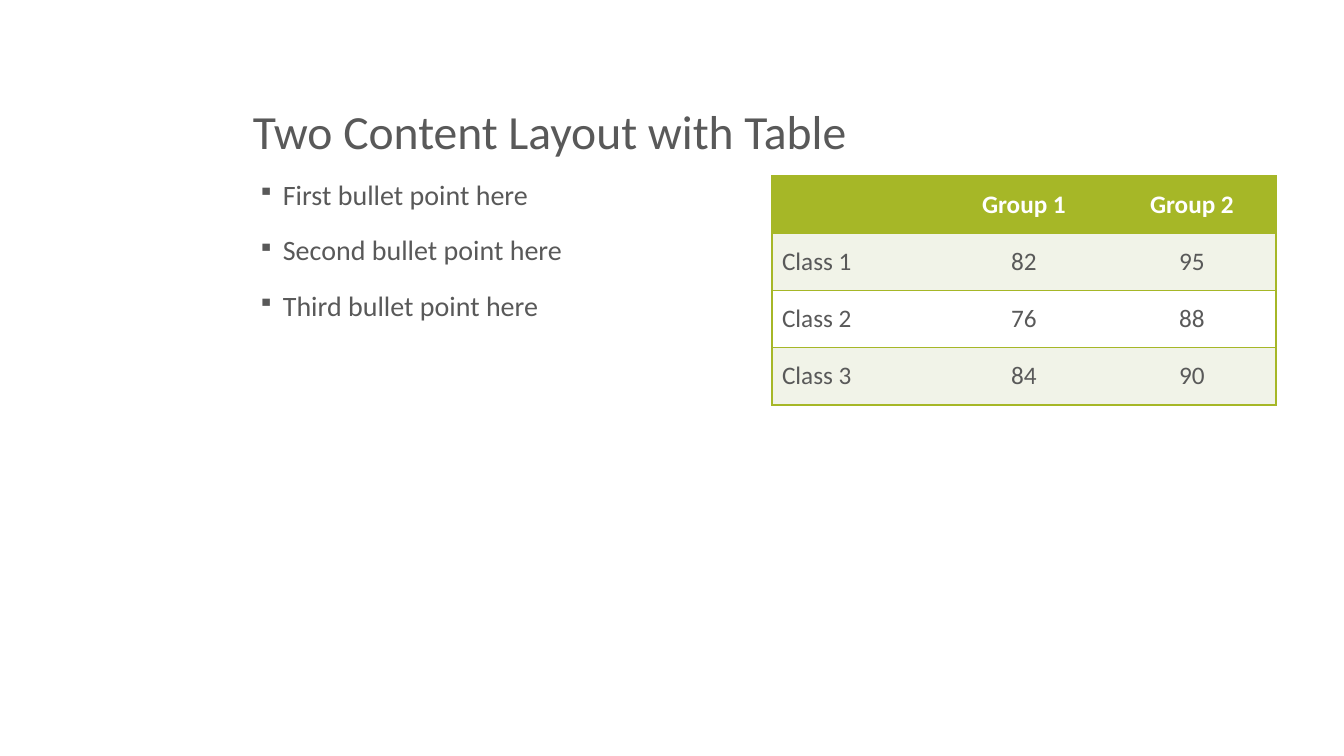
from dataclasses import dataclass

from lxml.etree import SubElement
from pptx import Presentation
from pptx.dml.color import RGBColor
from pptx.enum.text import MSO_ANCHOR, PP_ALIGN
from pptx.oxml.ns import qn
from pptx.util import Pt

SCALE = 914400 / 100.8


@dataclass(frozen=True)
class Theme:
    face: str = "Calibri"
    ink: str = "595959"
    green: str = "A6B727"
    pale: str = "F1F3E8"
    white: str = "FFFFFF"
    title: int = 34
    body: int = 20
    cell: int = 18


THEME = Theme()


def px(num):
    return round(num * SCALE)


def apply(item, form):
    for name, value in form.items():
        setattr(item, name, value)


def style(para, size, color=THEME.ink, bold=False):
    apply(para.font, {"name": THEME.face, "size": Pt(size), "bold": bold})
    para.font.color.rgb = RGBColor.from_string(color)


def add_frame(slide, box, anchor):
    frame = slide.shapes.add_textbox(*map(px, box)).text_frame
    apply(frame, {"word_wrap": True, "vertical_anchor": anchor})
    return frame


def add_title(slide, box, text):
    para = add_frame(slide, box, MSO_ANCHOR.BOTTOM).paragraphs[0]
    apply(para, {"text": text, "line_spacing": 0.9})
    style(para, THEME.title)


def add_list(slide, box, lines):
    frame = add_frame(slide, box, MSO_ANCHOR.TOP)
    for i, line in enumerate(lines):
        para = frame.add_paragraph() if i else frame.paragraphs[0]
        gap = Pt(18 if i else 0)
        apply(para, {"text": line, "line_spacing": 0.9, "space_before": gap})
        prop = para._p.get_or_add_pPr()
        prop.set("marL", str(px(30)))
        prop.set("indent", str(px(-25)))
        SubElement(prop, qn("a:buSzPct"), val="80000")
        SubElement(prop, qn("a:buChar"), char="▪")
        style(para, THEME.body)


def add_edge(cell, side, shown):
    prop = cell._tc.get_or_add_tcPr()
    line = SubElement(prop, qn(f"a:ln{side}"), w=str(Pt(1)))
    if shown:
        fill = SubElement(line, qn("a:solidFill"))
        SubElement(fill, qn("a:srgbClr"), val=THEME.green)
    else:
        SubElement(line, qn("a:noFill"))


def add_grid(slide, box, data):
    table = slide.shapes.add_table(len(data), len(data[0]), *map(px, box)).table
    apply(table, {"first_row": True, "horz_banding": False})
    last = len(data[0]) - 1
    for r, row in enumerate(data):
        back = THEME.pale if r % 2 else THEME.white
        for c, text in enumerate(row):
            cell = table.cell(r, c)
            apply(cell, {"text": text, "vertical_anchor": MSO_ANCHOR.MIDDLE})
            edges = {"L": c == 0, "R": c == last, "T": True, "B": True}
            for side, shown in edges.items():
                add_edge(cell, side, shown)
            cell.fill.solid()
            tint = back if r else THEME.green
            cell.fill.fore_color.rgb = RGBColor.from_string(tint)
            para = cell.text_frame.paragraphs[0]
            para.alignment = PP_ALIGN.CENTER if c else PP_ALIGN.LEFT
            style(para, THEME.cell, THEME.ink if r else THEME.white, r == 0)


def main():
    deck = Presentation()
    apply(deck, {"slide_width": px(1344), "slide_height": px(756)})
    slide = deck.slides.add_slide(deck.slide_layouts[6])
    add_title(slide, (243, 33, 1033, 132), "Two Content Layout with Table")
    add_list(slide, (243, 176, 504, 454), [
        "First bullet point here",
        "Second bullet point here",
        "Third bullet point here",
    ])
    add_grid(slide, (772, 176, 504, 229), [
        ("", "Group 1", "Group 2"),
        ("Class 1", "82", "95"),
        ("Class 2", "76", "88"),
        ("Class 3", "84", "90"),
    ])
    deck.save("out.pptx")


if __name__ == "__main__":
    main()
